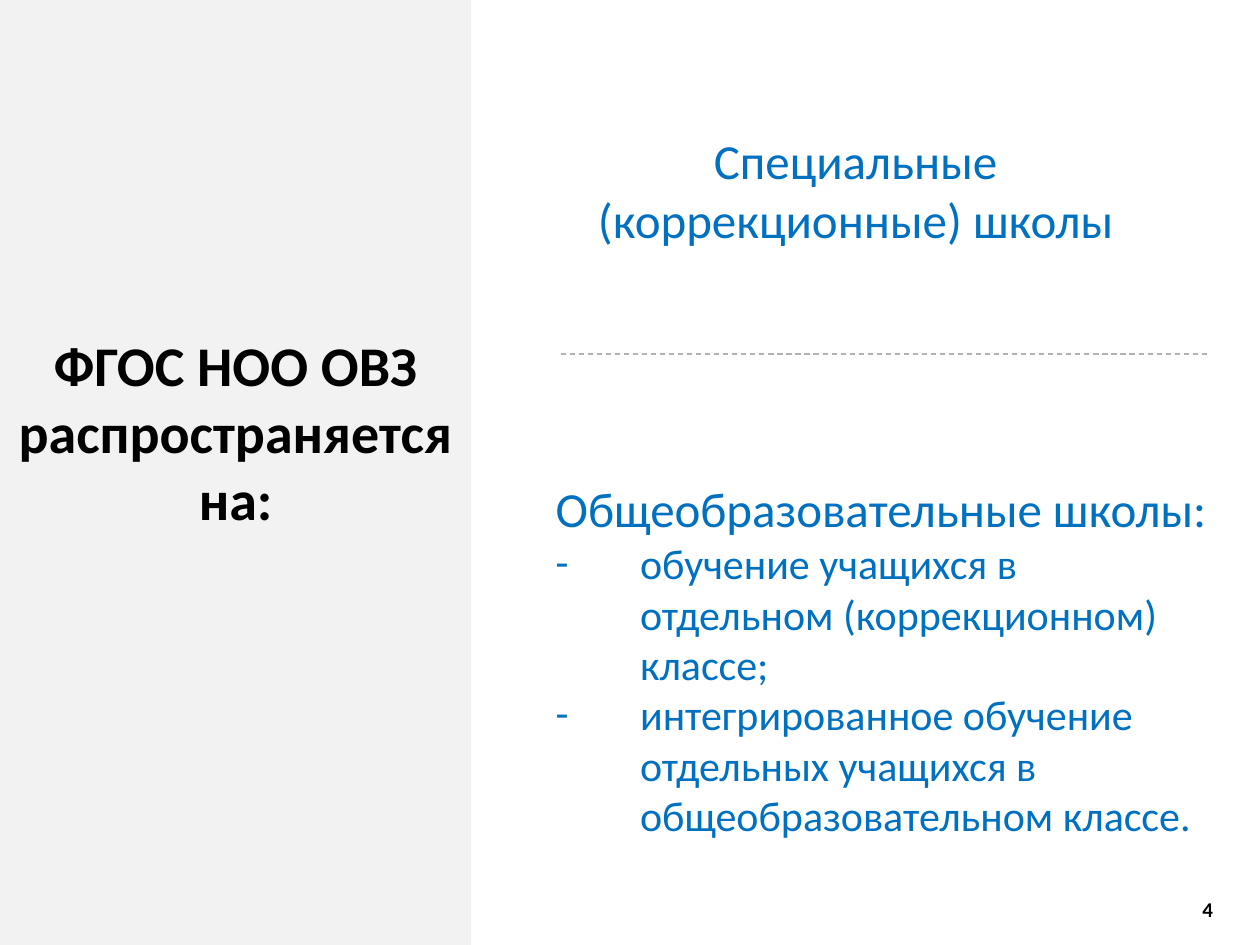
from dataclasses import dataclass

import pptx
import pptx.dml.color
import pptx.enum.dml
import pptx.enum.shapes
import pptx.enum.text
import pptx.oxml
import pptx.oxml.ns
import pptx.util
from lxml import etree

Inches = pptx.util.Inches
Align = pptx.enum.text.PP_ALIGN
Anchor = pptx.enum.text.MSO_ANCHOR


@dataclass(frozen=True)
class Theme:
    font: str = "Calibri"
    ink: str = "000000"
    accent: str = "0070C0"
    panel: str = "F2F2F2"
    rule: str = "B2B2B2"
    title_size: int = 32
    heading_size: int = 28
    list_size: int = 24
    number_size: int = 12


class SlideBuilder:
    def __init__(self, slide, theme):
        self.slide = slide
        self.theme = theme

    def color(self, value):
        return pptx.dml.color.RGBColor.from_string(value)

    def place(self, shape, left, top, width, height):
        shape.left, shape.top = Inches(left), Inches(top)
        shape.width, shape.height = Inches(width), Inches(height)

    def style(self, paragraph, size, color, align, bold=False):
        paragraph.alignment = align
        paragraph.space_before = pptx.util.Pt(0)
        font = paragraph.font
        font.name = self.theme.font
        font.size = pptx.util.Pt(size)
        font.bold = bold
        font.color.rgb = self.color(color)

    def prepare(self, frame, anchor):
        frame.word_wrap = True
        frame.auto_size = pptx.enum.text.MSO_AUTO_SIZE.NONE
        frame.vertical_anchor = anchor

    def panel(self, *box):
        rectangle = pptx.enum.shapes.MSO_SHAPE.RECTANGLE
        panel = self.slide.shapes.add_shape(rectangle, *map(Inches, box))
        panel.shadow.inherit = False
        panel.fill.solid()
        panel.fill.fore_color.rgb = self.color(self.theme.panel)
        panel.line.fill.background()
        self.slide.shapes._spTree.insert(2, panel._element)

    def title(self, text, *box):
        title = self.slide.shapes.title
        self.place(title, *box)
        frame = title.text_frame
        self.prepare(frame, Anchor.MIDDLE)
        frame.margin_bottom = Inches(0.53)
        frame.text = text
        self.style(frame.paragraphs[0], self.theme.title_size,
                   self.theme.ink, Align.CENTER, bold=True)

    def label(self, text, size, color, *box, anchor=Anchor.TOP, bold=False):
        label = self.slide.shapes.add_textbox(*map(Inches, box))
        frame = label.text_frame
        self.prepare(frame, anchor)
        frame.text = text
        self.style(frame.paragraphs[0], size, color, Align.CENTER, bold)

    def bullet(self, paragraph, mark=None):
        properties = paragraph._p.get_or_add_pPr()
        indent = Inches(0.67)
        properties.set("marL", str(indent))
        properties.set("indent", str(-indent))
        qn = pptx.oxml.ns.qn
        if mark is None:
            etree.SubElement(properties, qn("a:buNone"))
        else:
            etree.SubElement(properties, qn("a:buFont")).set("typeface", self.theme.font)
            etree.SubElement(properties, qn("a:buChar")).set("char", mark)

    def headed_list(self, heading, items, *box):
        body = self.slide.placeholders[1]
        self.place(body, *box)
        frame = body.text_frame
        self.prepare(frame, Anchor.TOP)
        frame.text = "\n".join([heading, *items])
        for index, paragraph in enumerate(frame.paragraphs):
            self.bullet(paragraph, "-" if index else None)
            size = self.theme.list_size if index else self.theme.heading_size
            self.style(paragraph, size, self.theme.accent, Align.LEFT)

    def divider(self, left, right, y):
        straight = pptx.enum.shapes.MSO_CONNECTOR.STRAIGHT
        divider = self.slide.shapes.add_connector(
            straight, Inches(left), Inches(y), Inches(right), Inches(y))
        divider.line.color.rgb = self.color(self.theme.rule)
        divider.line.width = pptx.util.Pt(0.75)
        divider.line.dash_style = pptx.enum.dml.MSO_LINE.DASH
        etree.SubElement(divider._element.spPr, pptx.oxml.ns.qn("a:effectLst"))


def main():
    deck = pptx.Presentation()
    deck.slide_width, deck.slide_height = Inches(10), Inches(7.5)
    theme = Theme()
    builder = SlideBuilder(deck.slides.add_slide(deck.slide_layouts[1]), theme)

    panel_width = 3.74
    builder.panel(0, 0, panel_width, 7.5)
    builder.title("ФГОС НОО ОВЗ распространяется на:", 0, 2.25, panel_width, 2.82)
    builder.label("Специальные (коррекционные) школы", theme.heading_size,
                  theme.accent, 4.29, 0.99, 5, 1.04)
    builder.headed_list(
        "Общеобразовательные школы:",
        ["обучение учащихся в отдельном (коррекционном) классе;",
         "интегрированное обучение отдельных учащихся в общеобразовательном классе."],
        4.31, 3.75, 5.42, 3)
    builder.divider(4.45, 9.59, 2.81)
    builder.label("4", theme.number_size, theme.ink, 9.41, 7.02, 0.35, 0.39,
                  anchor=Anchor.MIDDLE, bold=True)
    deck.save("out.pptx")


if __name__ == "__main__":
    main()
